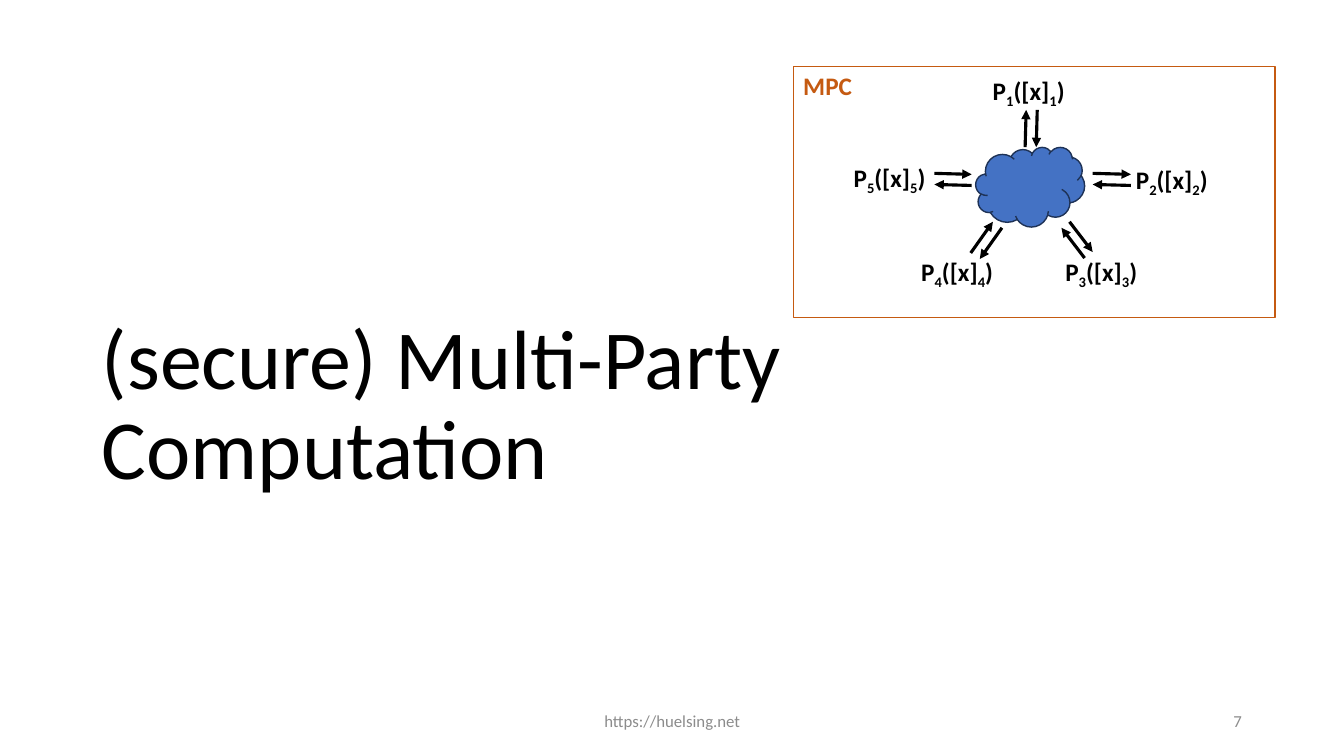
from lxml.etree import SubElement as Sub
from pptx import Presentation
from pptx.dml.color import RGBColor
from pptx.enum.shapes import MSO_CONNECTOR as Conn, MSO_SHAPE as Form
from pptx.enum.text import MSO_ANCHOR as Anchor, MSO_AUTO_SIZE as Fit, PP_ALIGN as Align
from pptx.oxml.ns import qn
from pptx.util import Inches, Pt

CELL = 0.1  # side of a grid cell in inches: columns and rows are counted in these
BLACK, RUST, BLUE, NAVY, GREY = "000000", "C55A11", "4472C4", "1E3256", "8C8C8C"


def grid(*cells):
    return [Inches(n * CELL) for n in cells]


def color(code):
    return RGBColor.from_string(code)


class Deck:
    font = "Calibri"

    def __init__(self):
        self.prs = Presentation()
        self.prs.slide_width, self.prs.slide_height = grid(133.33, 75)
        self.slide = self.prs.slides.add_slide(self.prs.slide_layouts[5])
        self.shapes = self.slide.shapes

    def letter(self, frame, runs, size, ink, bold=False, align=Align.LEFT, anchor=Anchor.TOP):
        """Fill a frame with (text, is_subscript) runs."""
        frame.word_wrap = True
        frame.auto_size = Fit.NONE
        frame.vertical_anchor = anchor
        para = frame.paragraphs[0]
        para.alignment = align
        for text, low in runs:
            run = para.add_run()
            run.text = text
            font = run.font
            font.name, font.size, font.bold = self.font, Pt(size), bold
            font.color.rgb = color(ink)
            if low:
                run._r.get_or_add_rPr().set("baseline", "-25000")
        return para

    def title(self, text, box):
        head = self.shapes.title
        head.left, head.top, head.width, head.height = grid(*box)
        para = self.letter(head.text_frame, [(text, False)], 60, BLACK, anchor=Anchor.BOTTOM)
        para.line_spacing = 0.9

    def text(self, runs, box, size, ink, **style):
        frame = self.shapes.add_textbox(*grid(*box)).text_frame
        self.letter(frame, runs, size, ink, **style)

    def shape(self, form, box, line, fill=None):
        item = self.shapes.add_shape(form, *grid(*box))
        item.shadow.inherit = False
        if fill:
            item.fill.solid()
            item.fill.fore_color.rgb = color(fill)
        else:
            item.fill.background()
        item.line.color.rgb = color(line)
        item.line.width = Pt(1)

    def arrow(self, start, end):
        item = self.shapes.add_connector(Conn.STRAIGHT, *grid(*start, *end))
        item.line.color.rgb = color(BLACK)
        item.line.width = Pt(2.25)
        Sub(item.line._get_or_add_ln(), qn("a:tailEnd"), type="triangle")
        Sub(item._element.spPr, qn("a:effectLst"))

    def pair(self, start, end, shift):
        """One arrow, and its answer beside it in the other direction."""
        self.arrow(start, end)
        back = [[n + d for n, d in zip(point, shift)] for point in (end, start)]
        self.arrow(*back)


def main():
    deck = Deck()
    deck.title("(secure) Multi-Party Computation", (9.1, 18.7, 115, 31.2))

    # Parties around the cloud, each with its share of x
    spots = [(97.5, 7), (111.7, 15.8), (104.7, 24.9), (90.4, 24.9), (83.7, 15.6)]
    for num, spot in enumerate(spots, 1):
        runs = [("P", False), (str(num), True), ("([x]", False), (str(num), True), (")", False)]
        deck.text(runs, (*spot, 9.6, 4), 18, BLACK, bold=True)

    # Cloud and the messages to and from it
    deck.shape(Form.CLOUD, (96.8, 14.6, 10.8, 7.9), NAVY, BLUE)
    links = [
        ((102.9, 10.9), (102.8, 14.6), (-1.1, 0)),
        ((108.4, 17.2), (112.2, 17.3), (0, 1.1)),
        ((106.1, 22), (108.4, 25), (-0.8, 0.6)),
        ((96.3, 25.1), (98.5, 22), (0.9, 0.6)),
        ((92.7, 17.2), (96.4, 17.3), (0, 1.1)),
    ]
    for link in links:
        deck.pair(*link)

    # Frame and its label
    deck.text([("MPC", False)], (78.7, 6.5, 12.1, 4), 18, RUST, bold=True)
    deck.shape(Form.RECTANGLE, (78.7, 6.6, 47.8, 24.9), RUST)

    # Footer
    feet = [("https://huelsing.net", 44.2, 45, Align.CENTER), ("7", 94.2, 30, Align.RIGHT)]
    for words, left, width, align in feet:
        deck.text([(words, False)], (left, 69.5, width, 4), 12, GREY,
                  align=align, anchor=Anchor.MIDDLE)

    deck.prs.save("out.pptx")


if __name__ == "__main__":
    main()
